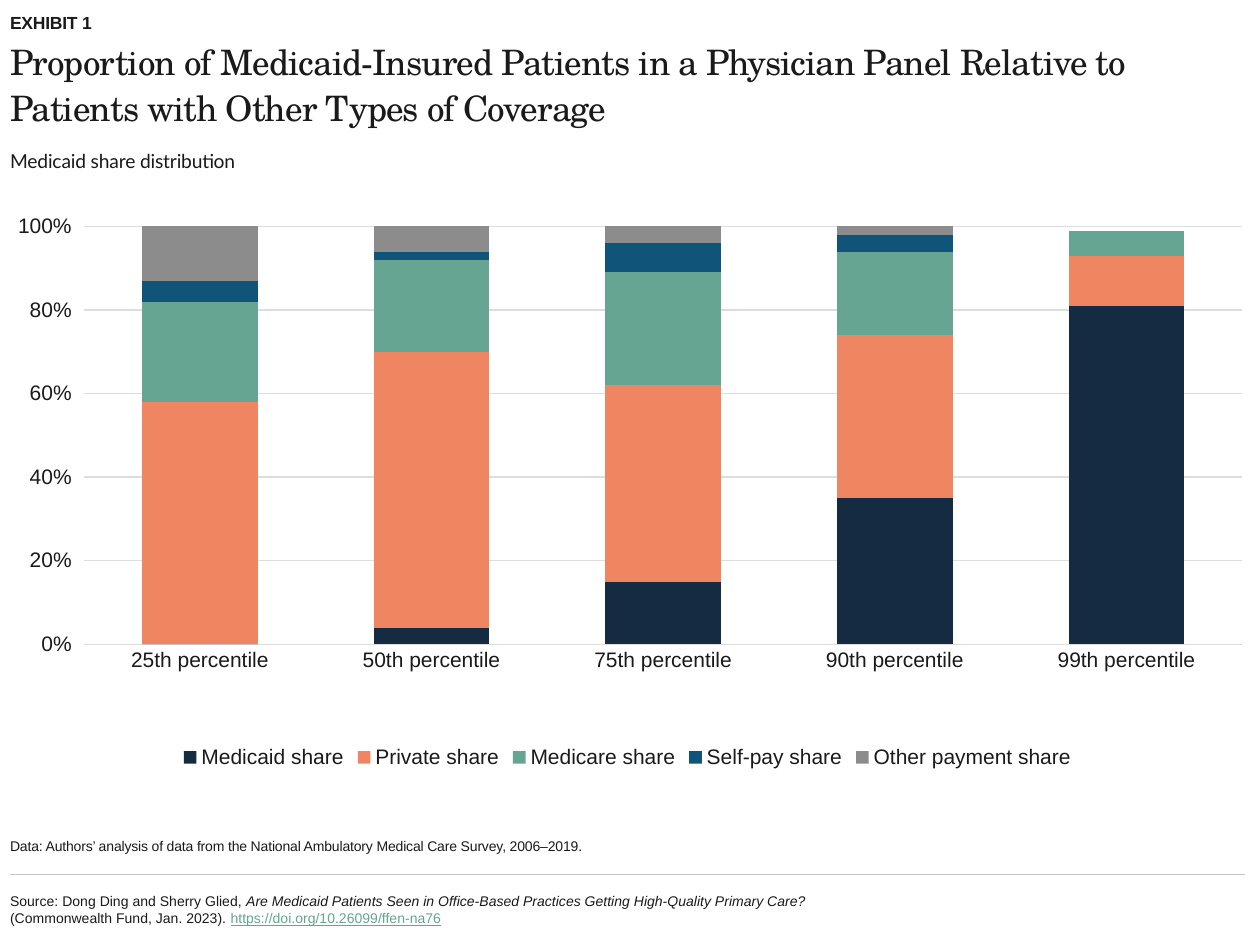
from lxml import etree
from pptx import Presentation
from pptx.chart.data import CategoryChartData
from pptx.dml.color import RGBColor
from pptx.enum.chart import XL_CHART_TYPE, XL_LEGEND_POSITION, XL_TICK_MARK
from pptx.enum.shapes import MSO_CONNECTOR
from pptx.enum.text import MSO_ANCHOR
from pptx.oxml import parse_xml
from pptx.oxml.ns import nsdecls, qn
from pptx.util import Inches, Pt

TOP, MIDDLE, BOTTOM = MSO_ANCHOR.TOP, MSO_ANCHOR.MIDDLE, MSO_ANCHOR.BOTTOM
STACKED = XL_CHART_TYPE.COLUMN_STACKED
LEGEND_BOTTOM = XL_LEGEND_POSITION.BOTTOM
NO_TICK, TICK_OUT = XL_TICK_MARK.NONE, XL_TICK_MARK.OUTSIDE

COLORS = {
    "text": "1A1A1A", "rule": "C6C6C6", "grid": "DDDDDD", "link": "65A591",
    "medicaid": "142B41", "private": "F08661", "medicare": "65A591",
    "self_pay": "115479", "other": "8C8C8C",
}
LEFT, WIDTH = 0.08, 9.8

CATEGORIES = [f"{n}th percentile" for n in (25, 50, 75, 90, 99)]
SERIES = [
    ("Medicaid share", "medicaid", (0, 0.04, 0.15, 0.35, 0.81)),
    ("Private share", "private", (0.58, 0.66, 0.47, 0.39, 0.12)),
    ("Medicare share", "medicare", (0.24, 0.22, 0.27, 0.2, 0.06)),
    ("Self-pay share", "self_pay", (0.05, 0.02, 0.07, 0.04, 0)),
    ("Other payment share", "other", (0.13, 0.07, 0.04, 0.02, 0)),
]
PLOT_AREA = {"x": 0.06, "y": 0.035, "w": 0.938, "h": 0.737}


def rgb(name):
    return RGBColor.from_string(COLORS[name])


def set_font(font, size, color="text", **formats):
    font.size = Pt(size)
    font.color.rgb = rgb(color)
    for name, value in {"name": "Arial", **formats}.items():
        setattr(font, name, value)


def set_line(line, color):
    line.color.rgb = rgb(color)
    line.width = Pt(0.75)


def add_text(s, box, runs, size, anchor, spacing=0, line_spacing=None, **formats):
    """Place one paragraph; runs are (text, own formats) pairs."""
    tf = s.shapes.add_textbox(*map(Inches, box)).text_frame
    tf.word_wrap = True
    tf.vertical_anchor = anchor
    for side in ("left", "top", "right", "bottom"):
        setattr(tf, f"margin_{side}", 0)
    p = tf.paragraphs[0]
    p.line_spacing = line_spacing
    for text, own in runs:
        r = p.add_run()
        r.text = text
        set_font(r.font, size, **{**formats, **own})
        if spacing:
            r.font._element.set("spc", str(round(spacing * 100)))


def add_header(s, left, width):
    add_text(s, (left, 0.05, width, 0.21), [("EXHIBIT 1", {})],
             10, BOTTOM, -0.1, bold=True)
    title = ("Proportion of Medicaid-Insured Patients in a Physician Panel "
             "Relative to Patients with Other Types of Coverage")
    add_text(s, (left, 0.29, width, 0.83), [(title, {})],
             20, TOP, -0.5, line_spacing=1.1, name="TeX Gyre Schola")
    add_text(s, (left, 1.14, width, 0.27), [("Medicaid share distribution", {})],
             11, MIDDLE, -0.1, name="Lato")


def set_plot_area(chart):
    """Fix the inner plot area as fractions of the chart."""
    plot_area = chart._chartSpace.chart.plotArea
    for old in plot_area.findall(qn("c:layout")):
        plot_area.remove(old)
    layout = parse_xml(f"<c:layout {nsdecls('c')}><c:manualLayout/></c:layout>")
    settings = {"layoutTarget": "inner", "xMode": "edge", "yMode": "edge", **PLOT_AREA}
    for tag, value in settings.items():
        etree.SubElement(layout[0], qn(f"c:{tag}")).set("val", str(value))
    plot_area.insert(0, layout)


def add_share_chart(s, box):
    data = CategoryChartData(number_format="0%")
    data.categories = CATEGORIES
    for name, _, values in SERIES:
        data.add_series(name, values)
    chart = s.shapes.add_chart(STACKED, *map(Inches, box), data).chart
    chart.has_title = False
    set_font(chart.font, 10)
    set_plot_area(chart)

    # Columns
    plot = chart.plots[0]
    plot.gap_width, plot.overlap = 100, 100
    plot.vary_by_categories = False
    for series, (_, color, _) in zip(plot.series, SERIES):
        series.format.fill.solid()
        series.format.fill.fore_color.rgb = rgb(color)

    # Axes
    cat, val = chart.category_axis, chart.value_axis
    cat.major_tick_mark, val.major_tick_mark = NO_TICK, TICK_OUT
    for axis in (cat, val):
        set_font(axis.tick_labels.font, 12)
    set_line(cat.format.line, "grid")
    val.format.line.fill.background()
    val.minimum_scale, val.maximum_scale, val.major_unit = 0, 1, 0.2
    val.tick_labels.number_format = "0%"
    val.tick_labels.number_format_is_linked = False
    set_line(val.major_gridlines.format.line, "grid")

    # Legend
    chart.has_legend = True
    chart.legend.position = LEGEND_BOTTOM
    chart.legend.include_in_layout = False
    set_font(chart.legend.font, 12)


def add_footer(s, left, width):
    note = ("Data: Authors’ analysis of data from the National Ambulatory "
            "Medical Care Survey, 2006–2019.")
    add_text(s, (left, 6.28, width, 0.5), [(note, {})], 8, BOTTOM, -0.1)

    # Divider
    y = Inches(6.94)
    rule = s.shapes.add_connector(MSO_CONNECTOR.STRAIGHT, Inches(left), y,
                                  Inches(left + width), y)
    set_line(rule.line, "rule")
    etree.SubElement(rule._element.spPr, qn("a:effectLst"))

    # Citation
    citation = [
        ("Source: Dong Ding and Sherry Glied, ", {}),
        ("Are Medicaid Patients Seen in Office-Based Practices Getting "
         "High-Quality Primary Care? ", {"italic": True}),
        ("(Commonwealth Fund, Jan. 2023). ", {}),
        ("https://doi.org/10.26099/ffen-na76", {"color": "link", "underline": True}),
    ]
    add_text(s, (left, 6.99, 6.44, 0.46), citation, 8, MIDDLE)


def main():
    prs = Presentation()
    prs.slide_width, prs.slide_height = Inches(10), Inches(7.5)
    s = prs.slides.add_slide(prs.slide_layouts[6])
    add_header(s, LEFT, WIDTH)
    add_share_chart(s, (LEFT, 1.64, WIDTH, 4.5))
    add_footer(s, LEFT, WIDTH)
    prs.save("out.pptx")


if __name__ == "__main__":
    main()
